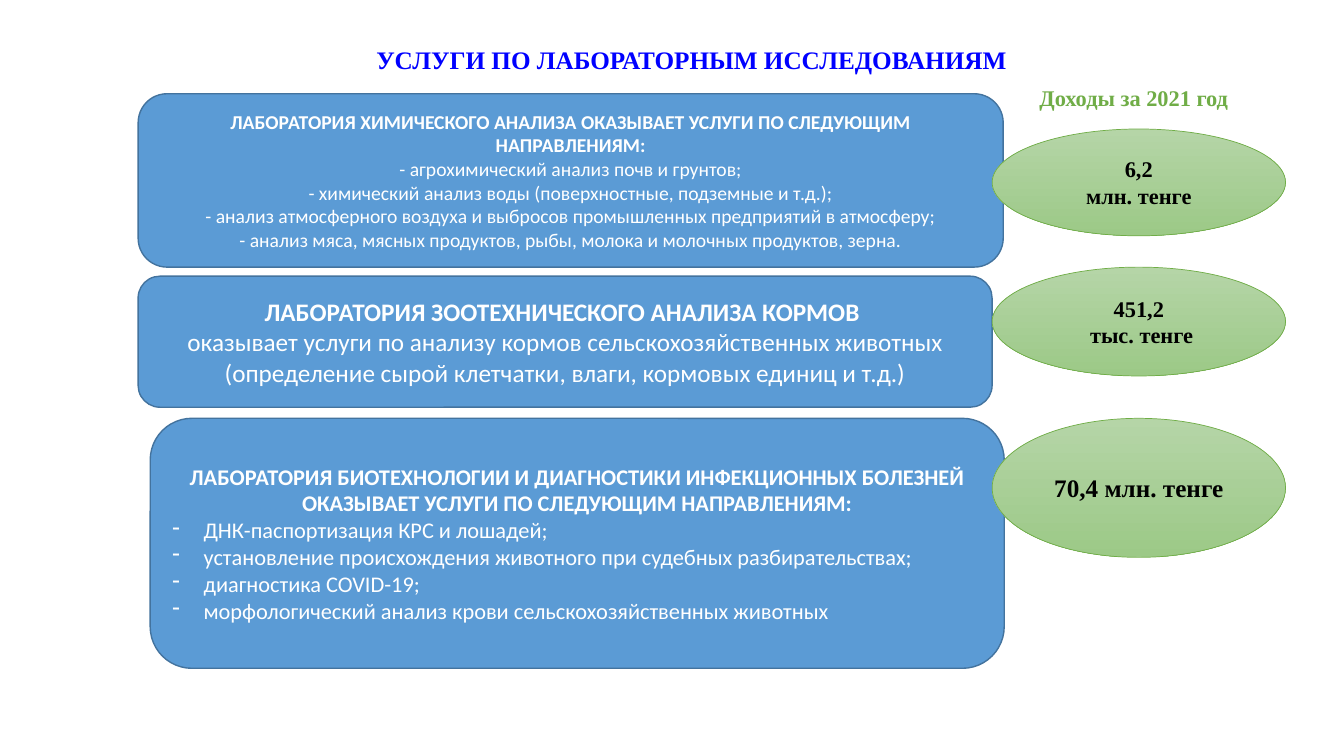
from pptx import Presentation
from pptx.dml.color import RGBColor
from pptx.enum.shapes import MSO_SHAPE as Preset
from pptx.enum.text import MSO_ANCHOR as Anchor, MSO_AUTO_SIZE as AutoSize, PP_ALIGN as Align
from pptx.oxml.xmlchemy import OxmlElement
from pptx.util import Inches, Pt


def colour(value):
    return RGBColor.from_string(value)


class LaboratorySlide:
    BODY_FONT = "Calibri"
    ACCENT_FONT = "Times New Roman"
    WHITE, BLACK = "FFFFFF", "000000"
    TITLE_BLUE = "0000FF"
    BOX_FILL, BOX_LINE = "5B9BD5", "43739E"
    GREEN = "70AD47"
    GRADIENT = ("B5D5A7", "9CC987")

    def __init__(self, presentation):
        self.slide = presentation.slides.add_slide(presentation.slide_layouts[5])

    def add_text(self, paragraph, text, size, font, ink, bold=True):
        paragraph.alignment = Align.CENTER
        run = paragraph.add_run()
        run.text = text
        run.font.size = Pt(size)
        run.font.name = font
        run.font.bold = bold
        run.font.color.rgb = colour(ink)

    def paragraphs(self, frame, count):
        return [frame.paragraphs[0]] + [frame.add_paragraph() for _ in range(count - 1)]

    def dash(self, paragraph):
        paragraph.alignment = Align.LEFT
        properties = paragraph._p.get_or_add_pPr()
        properties.set("marL", str(Inches(0.31)))
        properties.set("indent", str(-Inches(0.31)))
        bullet = OxmlElement("a:buChar")
        bullet.set("char", "-")
        properties.append(bullet)

    def title(self, text, left, top, width, height):
        title = self.slide.shapes.title
        title.left, title.top = Inches(left), Inches(top)
        title.width, title.height = Inches(width), Inches(height)
        frame = title.text_frame
        frame.word_wrap = True
        frame.auto_size = AutoSize.NONE
        frame.vertical_anchor = Anchor.TOP
        paragraph = frame.paragraphs[0]
        self.add_text(paragraph, text, 18, self.ACCENT_FONT, self.TITLE_BLUE)
        paragraph.line_spacing = 1.15
        paragraph.space_before = Pt(0)
        paragraph.space_after = Pt(10)

    def label(self, text, left, top, width, height):
        box = self.slide.shapes.add_textbox(
            Inches(left), Inches(top), Inches(width), Inches(height))
        box.text_frame.word_wrap = True
        self.add_text(box.text_frame.paragraphs[0], text, 16, self.ACCENT_FONT, self.GREEN)

    def shape(self, preset, left, top, width, height, line, line_width):
        shape = self.slide.shapes.add_shape(
            preset, Inches(left), Inches(top), Inches(width), Inches(height))
        shape.shadow.inherit = False
        shape.line.color.rgb = colour(line)
        shape.line.width = Pt(line_width)
        shape.text_frame.word_wrap = True
        shape.text_frame.vertical_anchor = Anchor.MIDDLE
        return shape

    def service_box(self, left, top, width, height, size, heading, lines, dashed=False):
        shape = self.shape(Preset.ROUNDED_RECTANGLE, left, top, width, height, self.BOX_LINE, 1)
        shape.fill.solid()
        shape.fill.fore_color.rgb = colour(self.BOX_FILL)
        first, *rest = self.paragraphs(shape.text_frame, len(lines) + 1)
        self.add_text(first, heading, size, self.BODY_FONT, self.WHITE)
        for paragraph, text in zip(rest, lines):
            self.add_text(paragraph, text, size, self.BODY_FONT, self.WHITE, bold=False)
            if dashed:
                self.dash(paragraph)

    def income(self, top, height, size, lines):
        shape = self.shape(Preset.OVAL, 9.84, top, 2.91, height, self.GREEN, 0.5)
        shape.fill.gradient()
        shape.fill.gradient_angle = 270
        for stop, value in zip(shape.fill.gradient_stops, self.GRADIENT):
            stop.color.rgb = colour(value)
        for paragraph, text in zip(self.paragraphs(shape.text_frame, len(lines)), lines):
            self.add_text(paragraph, text, size, self.ACCENT_FONT, self.BLACK)


def main():
    presentation = Presentation()
    presentation.slide_width = Inches(13.33)
    presentation.slide_height = Inches(7.5)
    page = LaboratorySlide(presentation)

    page.title("УСЛУГИ ПО ЛАБОРАТОРНЫМ ИССЛЕДОВАНИЯМ ", 2.07, 0.34, 9.64, 0.45)
    page.service_box(
        1.37, 0.93, 8.58, 1.72, 14,
        "ЛАБОРАТОРИЯ ХИМИЧЕСКОГО АНАЛИЗА ОКАЗЫВАЕТ УСЛУГИ ПО СЛЕДУЮЩИМ НАПРАВЛЕНИЯМ:",
        ["- агрохимический анализ почв и грунтов;",
         "- химический анализ воды (поверхностные, подземные и т.д.);",
         "- анализ атмосферного воздуха и выбросов промышленных предприятий в атмосферу;",
         "- анализ мяса, мясных продуктов, рыбы, молока и молочных продуктов, зерна."])
    page.service_box(
        1.37, 2.74, 8.47, 1.3, 18,
        "ЛАБОРАТОРИЯ ЗООТЕХНИЧЕСКОГО АНАЛИЗА КОРМОВ ",
        ["оказывает услуги по анализу кормов сельскохозяйственных животных "
         "(определение сырой клетчатки, влаги, кормовых единиц и т.д.)"])
    page.service_box(
        1.49, 4.15, 8.47, 2.48, 16,
        "ЛАБОРАТОРИЯ БИОТЕХНОЛОГИИ И ДИАГНОСТИКИ ИНФЕКЦИОННЫХ БОЛЕЗНЕЙ "
        "ОКАЗЫВАЕТ УСЛУГИ ПО СЛЕДУЮЩИМ НАПРАВЛЕНИЯМ:",
        ["ДНК-паспортизация КРС и лошадей;",
         "установление происхождения животного при судебных разбирательствах;",
         "диагностика COVID-19;",
         "морфологический анализ крови сельскохозяйственных животных"],
        dashed=True)

    page.income(1.28, 1.06, 16, ["6,2", "млн. тенге"])
    page.income(2.65, 1.08, 16, ["451,2", " тыс. тенге"])
    page.income(4.15, 1.38, 18, ["70,4 млн. тенге"])
    page.label("Доходы за 2021 год", 9.75, 0.79, 2.99, 0.37)

    presentation.save("out.pptx")


if __name__ == "__main__":
    main()
